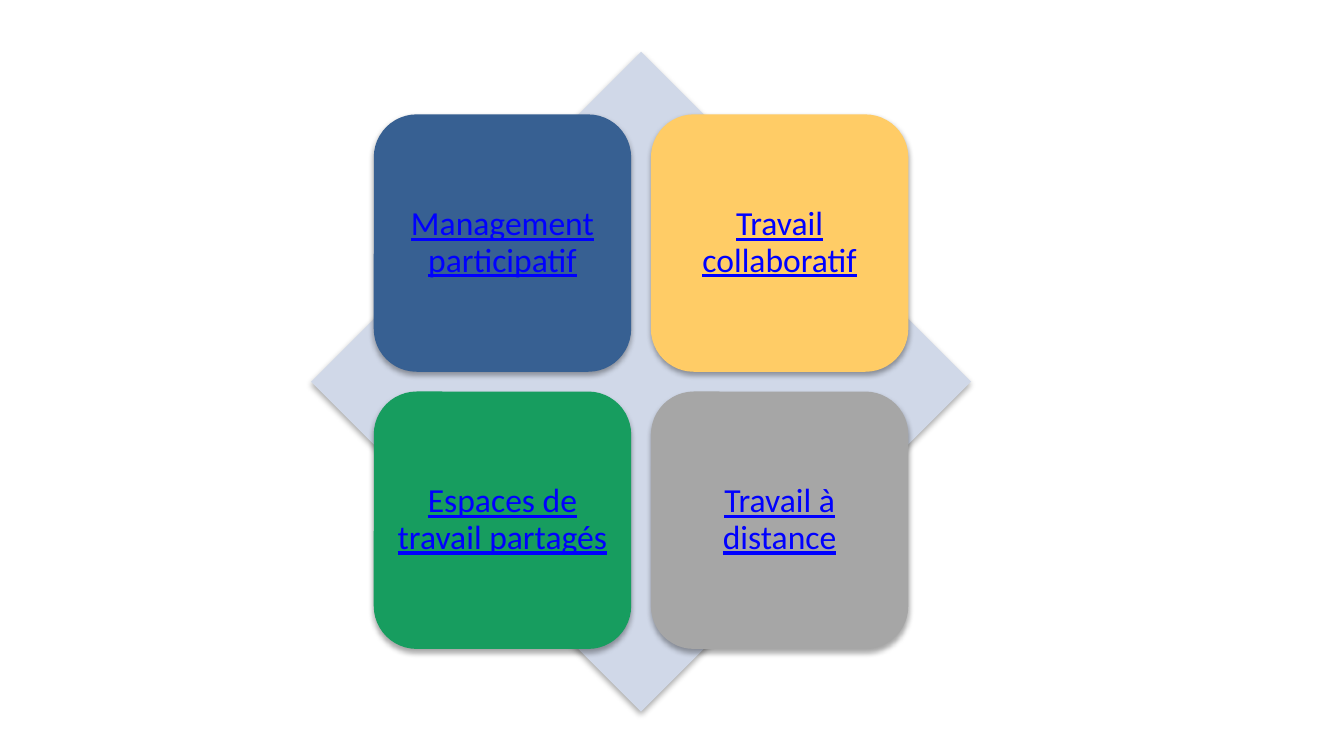
from lxml.etree import SubElement as Sub
from pptx import Presentation
from pptx.dml.color import RGBColor
from pptx.enum.shapes import MSO_SHAPE as Shape
from pptx.enum.text import MSO_ANCHOR as Anchor, PP_ALIGN as Align
from pptx.oxml.ns import qn
from pptx.util import Inches, Pt

PALE = RGBColor(0xD0, 0xD8, 0xE8)
NAVY = RGBColor(0x37, 0x60, 0x92)
GOLD = RGBColor(0xFF, 0xCC, 0x66)
GREEN = RGBColor(0x17, 0x9D, 0x5F)
GREY = RGBColor(0xA6, 0xA6, 0xA6)
BLUE = RGBColor(0x00, 0x00, 0xFF)

TILES = [
    ("Management participatif", NAVY),
    ("Travail collaboratif", GOLD),
    ("Espaces de travail partagés", GREEN),
    ("Travail à distance", GREY),
]
COLS = 2
WIDE = 10
HIGH = WIDE * 9 / 16
MID_X, MID_Y = 4.77, 2.84
SPAN = 4.91
SIDE, GAP = SPAN * 0.39, SPAN * 0.03
PAD = Inches(0.07)


def add_shade(shape):
    shape.shadow.inherit = False
    effects = shape.element.spPr.find(qn("a:effectLst"))
    shade = Sub(effects, qn("a:outerShdw"), blurRad=str(Pt(3.1)),
                dist=str(Pt(1.8)), dir="5400000", rotWithShape="0")
    tint = Sub(shade, qn("a:srgbClr"), val="000000")
    Sub(tint, qn("a:alpha"), val="35000")


def add_block(slide, kind, left, top, size, fill):
    block = slide.shapes.add_shape(
        kind, Inches(left), Inches(top), Inches(size), Inches(size))
    block.fill.solid()
    block.fill.fore_color.rgb = fill
    block.line.fill.background()
    add_shade(block)
    return block


def add_label(block, text):
    frame = block.text_frame
    frame.text = text
    frame.word_wrap = True
    frame.vertical_anchor = Anchor.MIDDLE
    frame.margin_left = frame.margin_right = PAD
    frame.margin_top = frame.margin_bottom = PAD
    para = frame.paragraphs[0]
    para.alignment = Align.CENTER
    para.line_spacing = 0.9
    font = para.runs[0].font
    font.name = "Calibri"
    font.size = Pt(18)
    font.underline = True
    font.color.rgb = BLUE


def main():
    deck = Presentation()
    deck.slide_width, deck.slide_height = Inches(WIDE), Inches(HIGH)
    slide = deck.slides.add_slide(deck.slide_layouts[6])
    add_block(slide, Shape.DIAMOND, MID_X - SPAN / 2, MID_Y - SPAN / 2,
              SPAN, PALE)
    step = SIDE + GAP
    left, top = MID_X - SIDE - GAP / 2, MID_Y - SIDE - GAP / 2
    for i, (text, fill) in enumerate(TILES):
        row, col = divmod(i, COLS)
        tile = add_block(slide, Shape.ROUNDED_RECTANGLE,
                         left + col * step, top + row * step, SIDE, fill)
        add_label(tile, text)
    deck.save("out.pptx")


if __name__ == "__main__":
    main()
